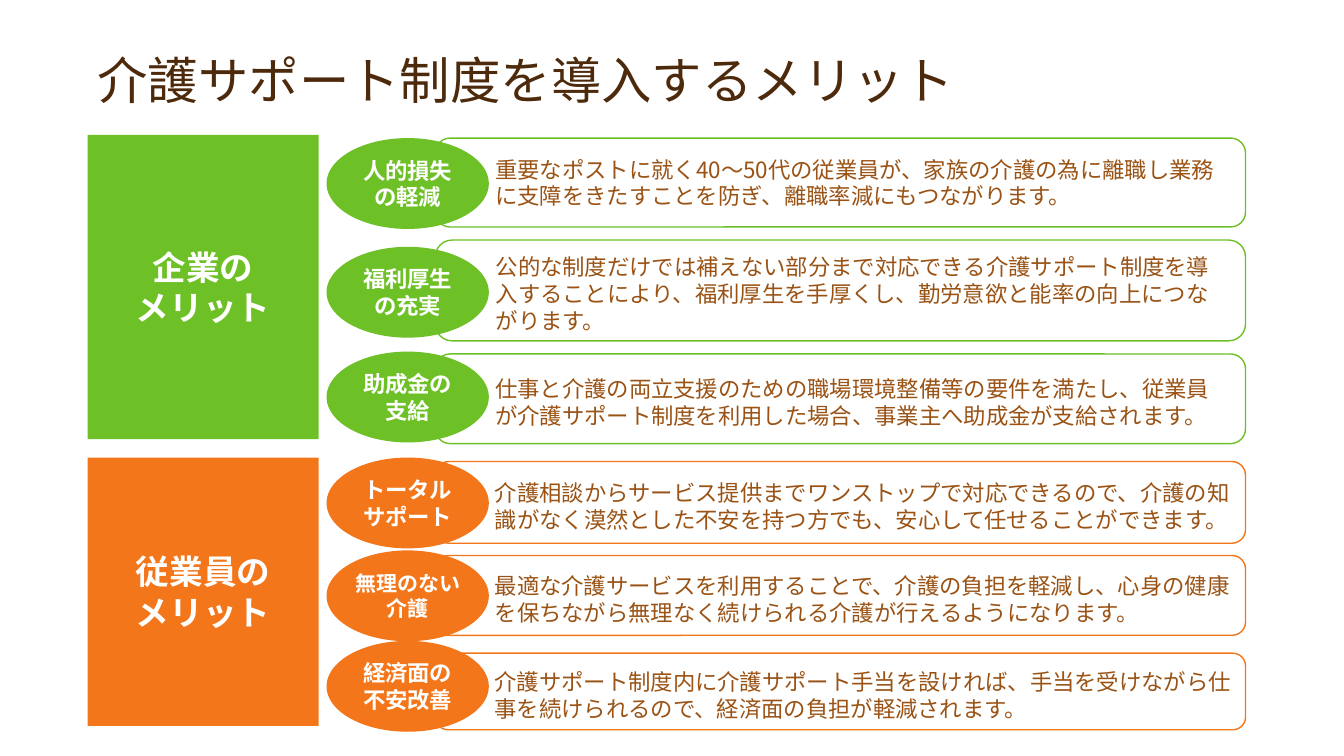
from pptx import Presentation
from pptx.dml.color import RGBColor
from pptx.enum.shapes import MSO_SHAPE as Shape
from pptx.enum.text import MSO_ANCHOR as Anchor, PP_ALIGN as Align
from pptx.oxml.ns import qn
from pptx.util import Cm, Pt
from lxml.etree import SubElement

FONT = "Noto Sans CJK JP"
GREEN, ORANGE, WHITE = "6DC025", "F3771A", "FFFFFF"
TITLE_BROWN, TEXT_BROWN = "4D2A0B", "9A5315"

# Shared columns: left, width
BLOCK = (2.21, 5.82)
BADGE = (8.23, 4.09)
BAR = (10.97, 20.42)
BADGE_HEIGHT = 2.29
MARGINS = (0.25, 0.13, 0.25, 0.13)


def color(value):
    return RGBColor.from_string(value)


class MeritPage:
    def __init__(self, deck):
        self.page = deck.slides.add_slide(deck.slide_layouts[6])

    def set_text(self, shape, lines, size, ink, bold=False, align=Align.LEFT,
                 anchor=Anchor.MIDDLE, margins=MARGINS, spacing=1.0):
        frame = shape.text_frame
        frame.word_wrap = True
        frame.vertical_anchor = anchor
        (frame.margin_left, frame.margin_top,
         frame.margin_right, frame.margin_bottom) = map(Cm, margins)
        frame.text = lines
        for para in frame.paragraphs:
            para.alignment = align
            para.line_spacing = spacing
            font = para.font
            font.name, font.size, font.bold = FONT, Pt(size), bold
            font.color.rgb = color(ink)
            # East Asian typeface
            defaults = para._p.pPr.find(qn("a:defRPr"))
            SubElement(defaults, qn("a:ea"), typeface=FONT)

    def shape(self, kind, column, top, height, fill, line=None):
        left, width = column
        shape = self.page.shapes.add_shape(
            kind, Cm(left), Cm(top), Cm(width), Cm(height))
        shape.shadow.inherit = False
        shape.fill.solid()
        shape.fill.fore_color.rgb = color(fill)
        if line:
            shape.line.color.rgb = color(line)
            shape.line.width = Pt(1)
        else:
            shape.line.fill.background()
        return shape

    def title(self, text):
        box = self.page.shapes.add_textbox(Cm(2.21), Cm(0.66), Cm(27.94), Cm(2.26))
        self.set_text(box, text, 36, TITLE_BROWN, anchor=Anchor.BOTTOM, spacing=0.9)

    def block(self, text, top, height, fill):
        block = self.shape(Shape.RECTANGLE, BLOCK, top, height, fill)
        self.set_text(block, text, 24, WHITE, bold=True, align=Align.CENTER)

    def bar(self, text, top, height, line, pad_top, pad_bottom):
        bar = self.shape(Shape.ROUNDED_RECTANGLE, BAR, top, height, WHITE, line)
        self.set_text(bar, text, 16, TEXT_BROWN,
                      margins=(1.4, pad_top, 0.25, pad_bottom))

    def badge(self, text, top, fill, size=16, side=0.25):
        badge = self.shape(Shape.OVAL, BADGE, top, BADGE_HEIGHT, fill)
        self.set_text(badge, text, size, WHITE, bold=True, align=Align.CENTER,
                      margins=(side, 0.13, side, 0.13))


# Group: heading, top, height, colour, merits
# Merit: badge text, badge top, badge style, bar top, bar height, bar padding, bar text
GROUPS = [
    ("企業の\nメリット", 3.4, 7.67, GREEN, [
        ("人的損失の軽減", 3.48, {}, 3.48, 2.24, (0.13, 0.13),
         "重要なポストに就く40～50代の従業員が、家族の介護の為に離職し業務に支障をきたすことを防ぎ、"
         "離職率減にもつながります。"),
        ("福利厚生の充実", 6.22, {}, 6.05, 2.54, (0.3, 0.13),
         "公的な制度だけでは補えない部分まで対応できる介護サポート制度を導入することにより、"
         "福利厚生を手厚くし、勤労意欲と能率の向上につながります。"),
        ("助成金の支給", 8.86, {}, 8.92, 2.26, (0.3, 0.13),
         "仕事と介護の両立支援のための職場環境整備等の要件を満たし、"
         "従業員が介護サポート制度を利用した場合、事業主へ助成金が支給されます。"),
    ]),
    ("従業員の\nメリット", 11.53, 6.76, ORANGE, [
        ("トータル\nサポート", 11.53, {}, 11.63, 2.06, (0.2, 0),
         "介護相談からサービス提供までワンストップで対応できるので、"
         "介護の知識がなく漠然とした不安を持つ方でも、安心して任せることができます。"),
        ("無理のない介護", 13.87, {"size": 15, "side": 0}, 14, 2.01, (0.3, 0.13),
         "最適な介護サービスを利用することで、介護の負担を軽減し、"
         "心身の健康を保ちながら無理なく続けられる介護が行えるようになります。"),
        ("経済面の不安改善", 16.15, {}, 16.46, 1.93, (0.3, 0.13),
         "介護サポート制度内に介護サポート手当を設ければ、"
         "手当を受けながら仕事を続けられるので、経済面の負担が軽減されます。"),
    ]),
]


def main():
    deck = Presentation()
    deck.slide_width, deck.slide_height = Cm(33.87), Cm(19.05)
    page = MeritPage(deck)
    page.title("介護サポート制度を導入するメリット")
    for heading, top, height, hue, merits in GROUPS:
        page.block(heading, top, height, hue)
        for label, badge_top, style, bar_top, bar_height, padding, text in merits:
            page.bar(text, bar_top, bar_height, hue, *padding)
            page.badge(label, badge_top, hue, **style)
    deck.save("out.pptx")


if __name__ == "__main__":
    main()
